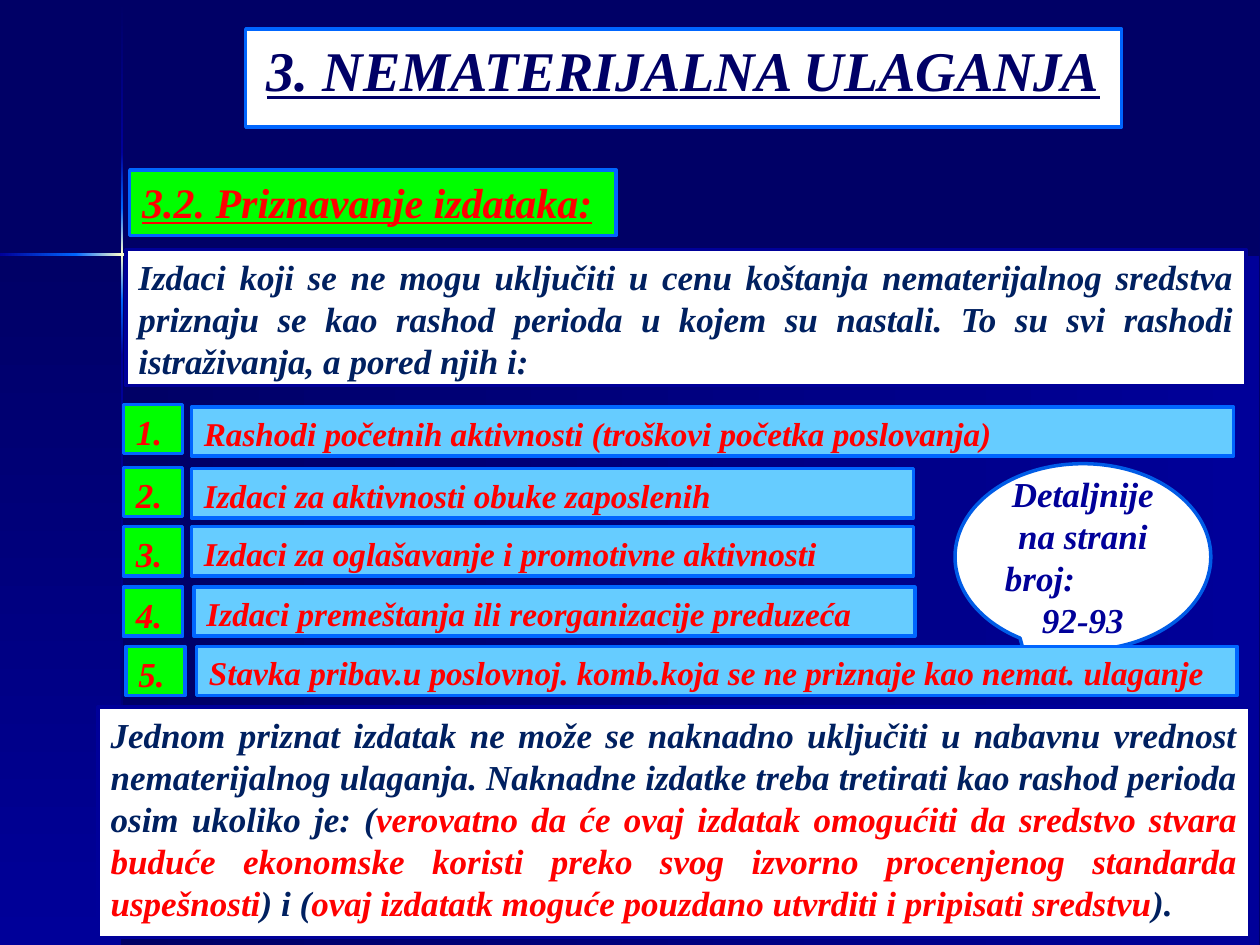
"""Builds the slide on recognising expenditure for intangible investments."""
import pptx
import pptx.dml.color
import pptx.enum.dml
import pptx.enum.shapes
import pptx.enum.text
import pptx.oxml
import pptx.oxml.ns
import pptx.util

Inches = pptx.util.Inches
SHAPE = pptx.enum.shapes.MSO_SHAPE
ALIGN = pptx.enum.text.PP_ALIGN
ANCHOR = pptx.enum.text.MSO_ANCHOR

COLORS = {
    "night": "000066", "navy": "000099", "blue": "0066FF", "glow": "FFFFCC",
    "white": "FFFFFF", "green": "00FF00", "sky": "66CCFF", "red": "FF0000",
    "ink": "002060", "callout": "005CE7",
}


def rgb(name):
    return pptx.dml.color.RGBColor.from_string(COLORS[name])


def write_text(paragraph, text, size=20, color="red", underline=False, align=ALIGN.LEFT):
    paragraph.alignment = align
    run = paragraph.add_run()
    run.text = text
    font = run.font
    font.name = "Times New Roman"
    font.size = pptx.util.Pt(size)
    font.bold = font.italic = True
    font.underline = underline
    font.color.rgb = rgb(color)


class SlideBuilder:
    """Holds the current slide and draws its kinds of element."""

    def __init__(self, slide):
        self.slide = slide
        background = slide.background.fill
        background.solid()
        background.fore_color.rgb = rgb("night")

    def style(self, shape, fill, line, anchor=ANCHOR.TOP):
        shape.fill.solid()
        shape.fill.fore_color.rgb = rgb(fill)
        shape.line.color.rgb = rgb(line)
        shape.line.width = pptx.util.Pt(2)
        frame = shape.text_frame
        frame.word_wrap = True
        frame.auto_size = pptx.enum.text.MSO_AUTO_SIZE.NONE
        frame.vertical_anchor = anchor
        return frame.paragraphs[0]

    def add(self, kind, box):
        shape = self.slide.shapes.add_shape(kind, *map(Inches, box))
        shape.shadow.inherit = False
        return shape

    def band(self, box, colors, vertical=False):
        shape = self.add(SHAPE.RECTANGLE, box)
        shape.line.fill.background()
        shape.fill.gradient()
        shape.fill.gradient_angle = 270 if vertical else 0
        stops = shape.element.spPr.find(".//" + pptx.oxml.ns.qn("a:gsLst"))
        for stop in list(stops):
            stops.remove(stop)
        for index, color in enumerate(colors):
            position = 100000 * index // (len(colors) - 1)
            stops.append(pptx.oxml.parse_xml(
                f'<a:gs {pptx.oxml.ns.nsdecls("a")} pos="{position}">'
                f'<a:srgbClr val="{COLORS[color]}"/></a:gs>'))

    def title(self, box, text):
        title = self.slide.shapes.title
        title.left, title.top, title.width, title.height = map(Inches, box)
        paragraph = self.style(title, "white", "blue")
        write_text(paragraph, text, size=32, color="night", underline=True,
                   align=ALIGN.CENTER)

    def panel(self, box, runs, fill="white", line="navy", **text_format):
        paragraph = self.style(self.add(SHAPE.RECTANGLE, box), fill, line)
        for text, color in runs:
            write_text(paragraph, text, color=color, **text_format)

    def callout(self, box, lines):
        shape = self.add(SHAPE.OVAL_CALLOUT, box)
        paragraph = self.style(shape, "white", "callout", anchor=ANCHOR.MIDDLE)
        for index, (text, align) in enumerate(lines):
            if index:
                paragraph = shape.text_frame.add_paragraph()
            write_text(paragraph, text, color="navy", align=align)

    def numbered_row(self, number, text, top, bar_top, left, bar_left, width):
        self.panel((left, top, 0.47, 0.39), [(f"{number}.", "red")],
                   fill="green", line="blue")
        self.panel((bar_left, bar_top, width, 0.39), [(text, "red")],
                   fill="sky", line="blue", size=19)


def main():
    deck = pptx.Presentation()
    deck.slide_width, deck.slide_height = Inches(10), Inches(7.5)
    builder = SlideBuilder(deck.slides.add_slide(deck.slide_layouts[5]))

    fade_in, fade_out = ("night", "navy"), ("navy", "night")
    spark = ("blue", "glow", "blue")
    bands = [
        ((0.97, 2.02, 9.02, 5.48), fade_in, False),
        ((0, 2.02, 0.97, 5.48), fade_in, True),
        ((0.96, 0.01, 0.02, 1.21), fade_in, True),
        ((0.96, 2.82, 0.02, 4.68), fade_out, True),
        ((1.77, 2.01, 8.22, 0.02), fade_out, False),
        ((0.96, 2.38, 0.02, 0.44), ("blue", "navy"), True),
        ((0.96, 1.21, 0.02, 0.44), ("navy", "blue"), True),
        ((0.96, 1.65, 0.02, 0.73), spark, True),
        ((0, 2.01, 0.61, 0.02), ("navy", "blue"), False),
        ((0.6, 2.01, 0.73, 0.02), spark, False),
    ]
    for box, colors, vertical in bands:
        builder.band(box, colors, vertical)

    builder.title((1.95, 0.23, 6.95, 0.78), "3. NEMATERIJALNA ULAGANJA")
    builder.panel((1.03, 1.35, 3.86, 0.52), [("3.2. Priznavanje izdataka:", "red")],
                  fill="green", line="blue", size=24, underline=True)
    builder.panel((1, 1.98, 8.89, 1.08), [
        ("Izdaci koji se ne mogu uključiti u cenu koštanja nematerijalnog sredstva "
         "priznaju se kao rashod perioda u kojem su nastali. To su svi rashodi "
         "istraživanja, a pored njih i:", "ink")], align=ALIGN.JUSTIFY)
    builder.callout((7.58, 3.68, 2.03, 1.48), [
        ("Detaljnije", ALIGN.CENTER), ("na strani", ALIGN.CENTER),
        ("broj:", ALIGN.LEFT), ("92-93", ALIGN.CENTER)])
    builder.panel((0.78, 5.61, 9.14, 1.83), [
        ("Jednom priznat izdatak ne može se naknadno uključiti u nabavnu vrednost "
         "nematerijalnog ulaganja. Naknadne izdatke treba tretirati kao rashod "
         "perioda osim ukoliko je: (", "ink"),
        ("verovatno da će ovaj izdatak omogućiti da sredstvo stvara buduće ekonomske "
         "koristi preko svog izvorno procenjenog standarda uspešnosti", "red"),
        (") i (", "ink"),
        ("ovaj izdatatk moguće pouzdano utvrditi i pripisati sredstvu", "red"),
        (").", "ink")], align=ALIGN.JUSTIFY)

    rows = [
        ("Rashodi početnih aktivnosti (troškovi početka poslovanja)",
         3.21, 3.23, 0.98, 1.52, 8.27),
        ("Izdaci za aktivnosti obuke zaposlenih", 3.71, 3.72, 0.98, 1.52, 5.73),
        ("Izdaci za oglašavanje i promotivne aktivnosti", 4.18, 4.18, 0.98, 1.52, 5.73),
        ("Izdaci premeštanja ili reorganizacije preduzeća",
         4.66, 4.66, 0.98, 1.54, 5.72),
        ("Stavka pribav.u poslovnoj. komb.koja se ne priznaje kao nemat. ulaganje",
         5.13, 5.13, 1, 1.56, 8.26),
    ]
    for number, row in enumerate(rows, start=1):
        builder.numbered_row(number, *row)

    deck.save("out.pptx")


if __name__ == "__main__":
    main()
